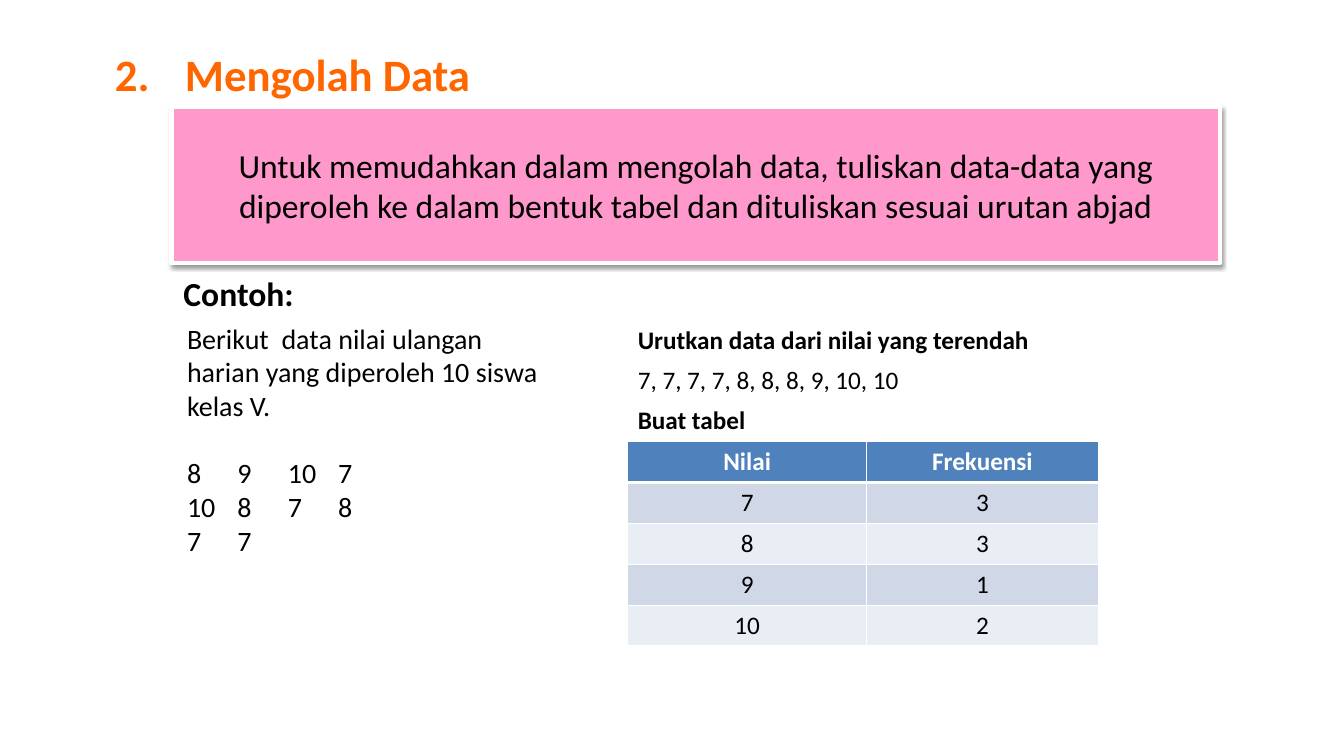
import pptx
import pptx.util
import pptx.oxml
import pptx.oxml.ns
import pptx.dml.color
import pptx.enum.shapes
import pptx.enum.text

Pt = pptx.util.Pt
RGBColor = pptx.dml.color.RGBColor
PP_ALIGN = pptx.enum.text.PP_ALIGN
MSO_ANCHOR = pptx.enum.text.MSO_ANCHOR
NS = pptx.oxml.ns.nsdecls("a")

ORANGE = RGBColor(0xFF, 0x66, 0x00)
PINK = RGBColor(0xFF, 0x99, 0xCC)
WHITE = RGBColor(0xFF, 0xFF, 0xFF)
BLACK = RGBColor(0x00, 0x00, 0x00)
BLUE = RGBColor(0x4F, 0x81, 0xBD)
BANDS = [RGBColor(0xD0, 0xD8, 0xE8), RGBColor(0xE9, 0xED, 0xF4)]

FREQUENCIES = [("Nilai", "Frekuensi"), ("7", "3"), ("8", "3"), ("9", "1"), ("10", "2")]
SCORES = ["8\t9\t10\t7", "10\t8\t7\t8", "7\t7"]


class SlideBuilder:
    font = {"name": "Calibri", "bold": False}

    def __init__(self, slide):
        self.slide = slide

    def format(self, p, size, color=BLACK, **extra):
        for name, value in {**self.font, "size": Pt(size), **extra}.items():
            setattr(p.font, name, value)
        p.font.color.rgb = color

    def text(self, box, lines, size, wrap=False, gap=0, tab=None, **style):
        """Add a text box; gap is the space after its first line."""
        tf = self.slide.shapes.add_textbox(*map(Pt, box)).text_frame
        tf.word_wrap = wrap
        tf.auto_size = pptx.enum.text.MSO_AUTO_SIZE.SHAPE_TO_FIT_TEXT
        for i, line in enumerate(lines):
            p = tf.add_paragraph() if i else tf.paragraphs[0]
            p.text = line
            if i == 1:
                p.space_before = Pt(gap)
            if tab:
                p._p.get_or_add_pPr().append(pptx.oxml.parse_xml(
                    f'<a:tabLst {NS}><a:tab pos="{Pt(tab)}" algn="l"/></a:tabLst>'))
            self.format(p, size, **style)

    def banner(self, box, text, size, fill):
        sp = self.slide.shapes.add_shape(
            pptx.enum.shapes.MSO_SHAPE.RECTANGLE, *map(Pt, box))
        sp.fill.solid()
        sp.fill.fore_color.rgb = fill
        sp.line.color.rgb = WHITE
        sp.line.width = Pt(3)
        sp.shadow.inherit = False
        effects = sp._element.spPr.find(pptx.oxml.ns.qn("a:effectLst"))
        effects.append(pptx.oxml.parse_xml(
            f'<a:outerShdw {NS} blurRad="{Pt(3.1)}" dist="{Pt(1.6)}" dir="5400000" '
            'rotWithShape="0"><a:srgbClr val="000000"><a:alpha val="38000"/>'
            '</a:srgbClr></a:outerShdw>'))
        tf = sp.text_frame
        tf.word_wrap = True
        tf.vertical_anchor = MSO_ANCHOR.MIDDLE
        p = tf.paragraphs[0]
        p.text = text
        p.alignment = PP_ALIGN.CENTER
        self.format(p, size)

    def borders(self, cell, **widths):
        for side, width in widths.items():
            cell._tc.get_or_add_tcPr().append(pptx.oxml.parse_xml(
                f'<a:ln{side} {NS} w="{Pt(width)}"><a:solidFill>'
                f'<a:srgbClr val="{WHITE}"/></a:solidFill></a:ln{side}>'))

    def table(self, left, top, widths, row_height, rows, size):
        table = self.slide.shapes.add_table(
            len(rows), len(widths), Pt(left), Pt(top),
            Pt(sum(widths)), Pt(row_height * len(rows))).table
        for column, width in zip(table.columns, widths):
            column.width = Pt(width)
        for r, row in enumerate(rows):
            header = r == 0
            for c, value in enumerate(row):
                cell = table.cell(r, c)
                self.borders(cell, L=1, R=1, T=3 if r == 1 else 1, B=3 if header else 1)
                cell.fill.solid()
                cell.fill.fore_color.rgb = BLUE if header else BANDS[(r - 1) % 2]
                cell.vertical_anchor = MSO_ANCHOR.MIDDLE
                p = cell.text_frame.paragraphs[0]
                p.text = value
                p.alignment = PP_ALIGN.CENTER
                self.format(p, size, WHITE if header else BLACK, bold=header)


def main():
    prs = pptx.Presentation()
    prs.slide_width, prs.slide_height = Pt(960), Pt(540)
    s = SlideBuilder(prs.slides.add_slide(prs.slide_layouts[6]))

    s.text((75, 30, 270, 46), ["2.\tMengolah Data"], 32, tab=50, color=ORANGE, bold=True)
    s.banner((122.5, 76.5, 749, 111.5),
             "Untuk memudahkan dalam mengolah data, tuliskan data-data yang "
             "diperoleh ke dalam bentuk tabel dan dituliskan sesuai urutan abjad", 24, PINK)
    s.text((124, 191.5, 94, 36), ["Contoh:"], 24, bold=True)
    s.text((126.5, 226, 273, 177),
           ["Berikut  data nilai ulangan harian yang diperoleh 10 siswa kelas V.", *SCORES],
           20, wrap=True, gap=24)

    steps = [("Urutkan data dari nilai yang terendah", 296, True),
             ("7, 7, 7, 7, 8, 8, 8, 9, 10, 10", 204, False),
             ("Buat tabel", 96.5, True)]
    for i, (step, width, bold) in enumerate(steps):
        s.text((448.5, 228 + 28.5 * i, width, 29), [step], 18, bold=bold)
    s.table(448.5, 315.5, (170.5, 165.5), 29.2, FREQUENCIES, 18)

    prs.save("out.pptx")


if __name__ == "__main__":
    main()
